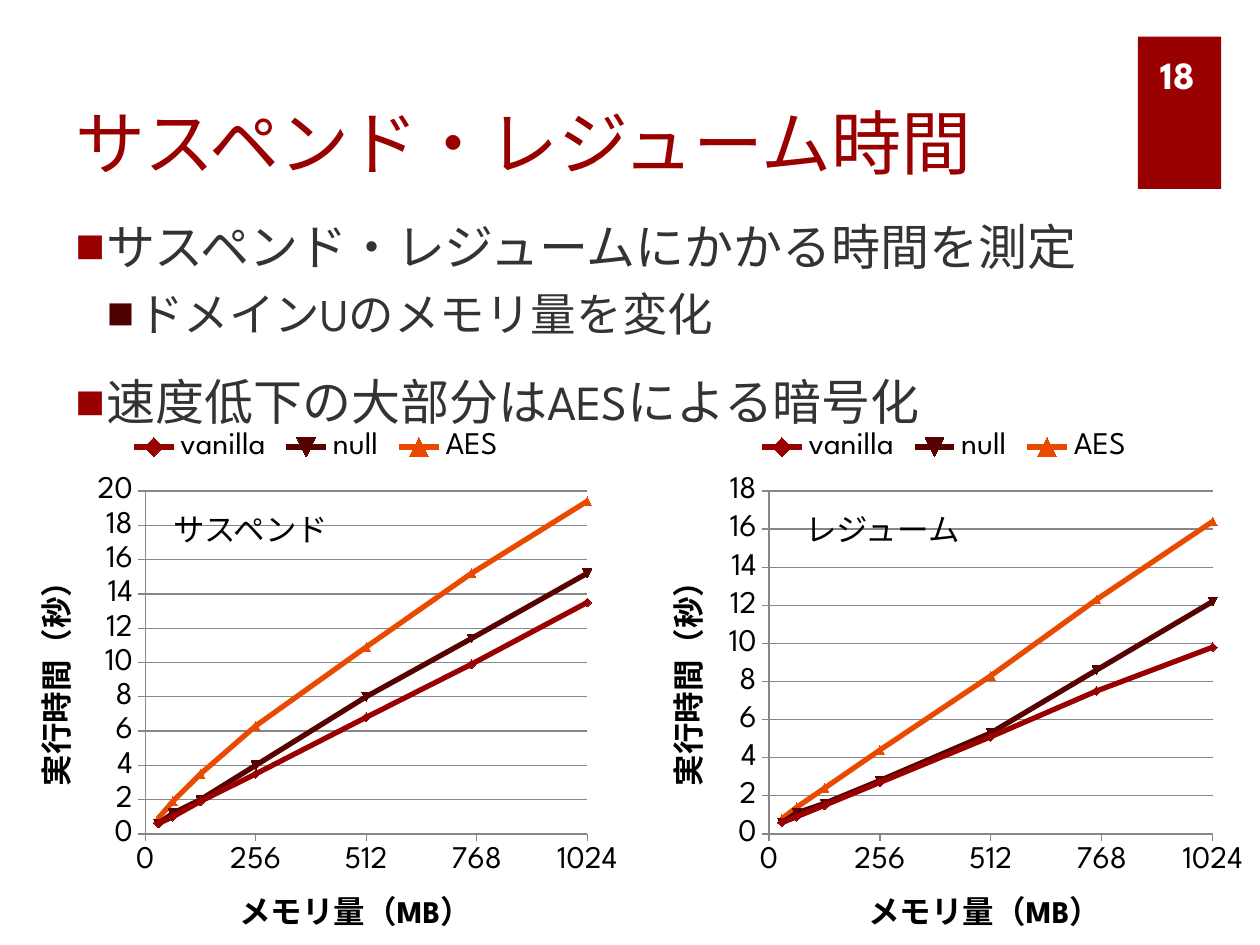
"""Build a slide comparing suspend and resume times with two scatter charts."""
from dataclasses import dataclass

from lxml import etree
from pptx import Presentation
from pptx.chart.data import XyChartData
from pptx.dml.color import RGBColor
from pptx.enum.chart import XL_CHART_TYPE, XL_LEGEND_POSITION, XL_TICK_MARK
from pptx.enum.shapes import MSO_SHAPE
from pptx.enum.text import MSO_ANCHOR, MSO_AUTO_SIZE, PP_ALIGN
from pptx.oxml.ns import qn
from pptx.util import Cm, Pt

SCATTER = XL_CHART_TYPE.XY_SCATTER_LINES
TOP_LEGEND = XL_LEGEND_POSITION.TOP
OUTSIDE = XL_TICK_MARK.OUTSIDE
RECT = MSO_SHAPE.RECTANGLE
BOTTOM, MIDDLE, TOP = MSO_ANCHOR.BOTTOM, MSO_ANCHOR.MIDDLE, MSO_ANCHOR.TOP
LEFT, RIGHT = PP_ALIGN.LEFT, PP_ALIGN.RIGHT
NO_FIT = MSO_AUTO_SIZE.NONE

FONT = "League Spartan"
COLORS = {
    "red": "990000", "dark": "4D0000", "text": "333333", "black": "000000",
    "white": "FFFFFF", "grid": "878787",
    "vanilla": "990000", "null": "580101", "AES": "E94A00",
}
MEMORY = (30, 64, 128, 256, 512, 756, 1024)


@dataclass
class Bullet:
    text: str
    level: int
    size: int
    before: int
    color: str


@dataclass
class TimeChart:
    label: str
    label_left: float
    box: tuple
    plot: tuple
    maximum: int | None
    times: dict


BULLETS = (
    Bullet("サスペンド・レジュームにかかる時間を測定", 0, 28, 18, "red"),
    Bullet("ドメインUのメモリ量を変化", 1, 26, 6, "dark"),
    Bullet("速度低下の大部分はAESによる暗号化", 0, 28, 18, "red"),
)
CHARTS = (
    TimeChart("レジューム", 15.98, (12.73, 8.41, 12.6, 10.64),
              (0.22, 0.14, 0.71, 0.65), None, {
                  "vanilla": (0.6, 0.9, 1.5, 2.7, 5.1, 7.5, 9.8),
                  "null": (0.6, 1.1, 1.6, 2.8, 5.3, 8.6, 12.2),
                  "AES": (0.8, 1.4, 2.4, 4.4, 8.3, 12.3, 16.4)}),
    TimeChart("サスペンド", 3.25, (0, 8.41, 12.73, 10.64),
              (0.23, 0.14, 0.7, 0.65), 20, {
                  "vanilla": (0.6, 1, 1.9, 3.5, 6.8, 9.9, 13.5),
                  "null": (0.6, 1.2, 2, 4, 8, 11.4, 15.2),
                  "AES": (0.9, 1.9, 3.5, 6.3, 10.9, 15.2, 19.4)}),
)


def rgb(name: str) -> RGBColor:
    return RGBColor.from_string(COLORS[name])


def style(font, size: int, color: str, name: str = FONT, bold: bool = False) -> None:
    font.size, font.name, font.bold = Pt(size), name, bold
    font.color.rgb = rgb(color)
    etree.SubElement(font._rPr, qn("a:ea"), typeface=name)


def add_text(s, box: tuple, text: str, size: int, color: str, name: str = FONT,
             bold: bool = False, align=LEFT, anchor=TOP, wrap: bool = True) -> None:
    tf = s.shapes.add_textbox(*map(Cm, box)).text_frame
    tf.word_wrap, tf.vertical_anchor = wrap, anchor
    p = tf.paragraphs[0]
    p.text, p.alignment = text, align
    style(p.runs[0].font, size, color, name, bold)


def add_title(s, text: str) -> None:
    sp = s.shapes.title
    sp.left, sp.top, sp.width, sp.height = map(Cm, (1.27, 0.64, 21.39, 3.18))
    tf = sp.text_frame
    tf.text, tf.vertical_anchor, tf.auto_size = text, BOTTOM, NO_FIT
    p = tf.paragraphs[0]
    p.alignment = LEFT
    style(p.runs[0].font, 40, "red")


def add_bullets(s, box: tuple) -> None:
    tf = s.shapes.add_textbox(*map(Cm, box)).text_frame
    tf.word_wrap = True
    tf.text = "\n".join(b.text for b in BULLETS)
    for p, b in zip(tf.paragraphs, BULLETS):
        p.level, p.space_before = b.level, Pt(b.before)
        style(p.runs[0].font, b.size, "text")
        props = p._p.get_or_add_pPr()
        props.set("marL", str(Cm(0.635 * (b.level + 1))))
        props.set("indent", str(-Cm(0.635)))
        color = etree.SubElement(props, qn("a:buClr"))
        etree.SubElement(color, qn("a:srgbClr"), val=COLORS[b.color])
        etree.SubElement(props, qn("a:buFont"), typeface="Arial")
        etree.SubElement(props, qn("a:buChar"), char="■")


def set_layout(parent, index: int, values: list) -> None:
    for old in parent.findall(qn("c:layout")):
        parent.remove(old)
    layout = etree.Element(qn("c:layout"))
    parent.insert(index, layout)
    manual = etree.SubElement(layout, qn("c:manualLayout"))
    for tag, val in values:
        etree.SubElement(manual, qn(f"c:{tag}"), val=str(val))


def format_axis(axis, title: str) -> None:
    axis.major_tick_mark = OUTSIDE
    axis.format.line.color.rgb = rgb("grid")
    axis.has_title = True
    tf = axis.axis_title.text_frame
    tf.text = title
    style(tf.paragraphs[0].runs[0].font, 18, "black", bold=True)


def add_time_chart(s, spec: TimeChart) -> None:
    data = XyChartData()
    for name, times in spec.times.items():
        series = data.add_series(name)
        for x, y in zip(MEMORY, times):
            series.add_data_point(x, y)
    chart = s.shapes.add_chart(SCATTER, *map(Cm, spec.box), data).chart
    style(chart.font, 18, "black")
    chart.has_title = False
    chart.has_legend = True
    chart.legend.position = TOP_LEGEND
    chart.legend.include_in_layout = False
    x_axis, y_axis = chart.category_axis, chart.value_axis
    format_axis(x_axis, "メモリ量（MB）")
    format_axis(y_axis, "実行時間（秒）")
    edges = [("xMode", "edge"), ("yMode", "edge")]
    set_layout(chart._chartSpace.chart.plotArea, 0,
               [("layoutTarget", "inner"), *edges, *zip("xywh", spec.plot)])
    set_layout(x_axis.axis_title._element, 1, [*edges, ("x", 0.37), ("y", 0.9)])
    x_axis.has_major_gridlines = False
    x_axis.minimum_scale, x_axis.maximum_scale, x_axis.major_unit = 0, 1024, 256
    y_axis.maximum_scale = spec.maximum
    y_axis.has_major_gridlines = True
    y_axis.major_gridlines.format.line.color.rgb = rgb("grid")
    plot = chart.plots[0]
    plot.vary_by_categories = False
    for number, series in enumerate(plot.series, 1):
        color = rgb(series.name)
        series._element.find(qn("c:idx")).set("val", str(number))
        series.smooth = False
        series.format.line.width = Pt(3)
        series.format.line.color.rgb = color
        mark = series.marker.format
        mark.fill.solid()
        mark.fill.fore_color.rgb = color
        mark.line.color.rgb = color


def main() -> None:
    prs = Presentation()
    prs.slide_width, prs.slide_height = Cm(25.4), Cm(19.05)
    s = prs.slides.add_slide(prs.slide_layouts[5])
    sp = s.shapes.add_shape(RECT, *map(Cm, (22.94, 0.74, 1.68, 3.07)))
    sp.shadow.inherit = False
    sp.fill.solid()
    sp.fill.fore_color.rgb = rgb("red")
    sp.line.fill.background()
    add_title(s, "サスペンド・レジューム時間")
    add_bullets(s, (1.27, 4.24, 22.66, 13.41))
    add_text(s, (22.94, 0.99, 1.4, 1.02), "18", 22, "white", bold=True,
             align=RIGHT, anchor=MIDDLE)
    for spec in CHARTS:
        add_time_chart(s, spec)
    for spec in CHARTS:
        add_text(s, (spec.label_left, 10.16, 3.71, 1.02), spec.label, 18, "black",
                 name="Arial", wrap=False)
    prs.save("out.pptx")


if __name__ == "__main__":
    main()
